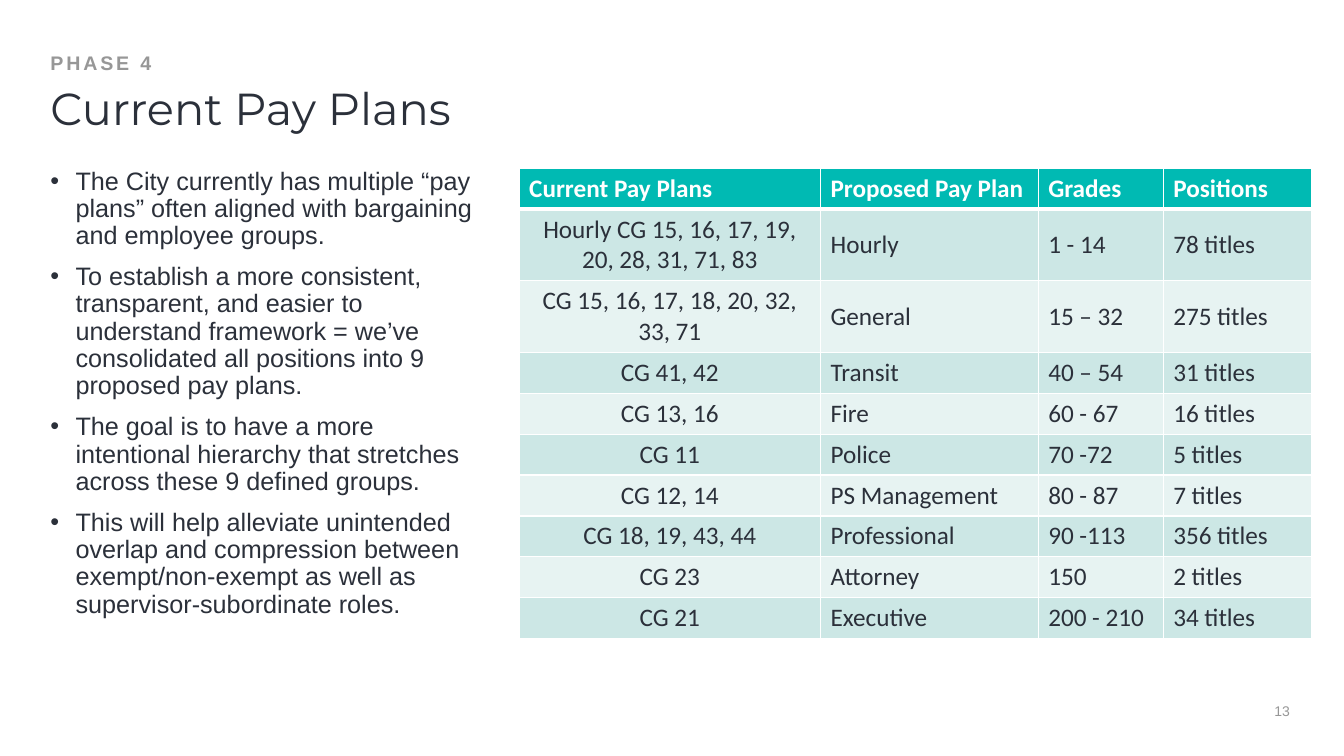
from lxml.etree import SubElement
from pptx import Presentation
from pptx.dml.color import RGBColor
from pptx.enum.text import MSO_ANCHOR, MSO_AUTO_SIZE, PP_ALIGN
from pptx.oxml.ns import qn
from pptx.util import Pt

HUES = {
    "ink": "2B303A",
    "gray": "979797",
    "white": "FFFFFF",
    "teal": "00BAB3",
    "dark": "CCE7E5",
    "light": "E7F3F2",
}
POINTS = [
    "The City currently has multiple “pay plans” often aligned with bargaining and employee groups.",
    "To establish a more consistent, transparent, and easier to understand framework = we’ve consolidated all positions into 9 proposed pay plans.",
    "The goal is to have a more intentional hierarchy that stretches across these 9 defined groups.",
    "This will help alleviate unintended overlap and compression between exempt/non-exempt as well as supervisor-subordinate roles.",
]
PLANS = [
    ("Current Pay Plans", "Proposed Pay Plan", "Grades", "Positions"),
    ("Hourly CG 15, 16, 17, 19, 20, 28, 31, 71, 83", "Hourly", "1 - 14", "78 titles"),
    ("CG 15, 16, 17, 18, 20, 32, 33, 71", "General", "15 – 32", "275 titles"),
    ("CG 41, 42", "Transit", "40 – 54", "31 titles"),
    ("CG 13, 16", "Fire", "60 - 67", "16 titles"),
    ("CG 11", "Police", "70 -72", "5 titles"),
    ("CG 12, 14", "PS Management", "80 - 87", "7 titles"),
    ("CG 18, 19, 43, 44", "Professional", "90 -113", "356 titles"),
    ("CG 23", "Attorney", "150", "2 titles"),
    ("CG 21", "Executive", "200 - 210", "34 titles"),
]
WIDTHS = [215.3, 155.5, 89.3, 105.8]
ROW = 29.2


def color(name):
    return RGBColor.from_string(HUES[name])


def style(par, face, size, hue, bold=False):
    for run in par.runs:
        run.font.name = face
        run.font.size = Pt(size)
        run.font.bold = bold
        run.font.color.rgb = color(hue)


def place(shape, box, anchor, top=0):
    shape.left, shape.top, shape.width, shape.height = map(Pt, box)
    frame = shape.text_frame
    frame.word_wrap = True
    frame.auto_size = MSO_AUTO_SIZE.NONE
    frame.vertical_anchor = anchor
    frame.margin_left = frame.margin_right = frame.margin_bottom = 0
    frame.margin_top = Pt(top)
    return frame


def add_label(slide, box, text, anchor):
    frame = place(slide.shapes.add_textbox(*map(Pt, box)), box, anchor)
    frame.text = text
    return frame.paragraphs[0]


def add_head(slide, box):
    left, top, width, height = box
    kicker = add_label(slide, (left, top, width, 15.1), "PHASE 4", MSO_ANCHOR.BOTTOM)
    kicker.line_spacing = 0.9
    style(kicker, "Arial", 14, "gray", True)
    kicker.runs[0].font._element.set("spc", "200")

    frame = place(slide.shapes.title, (left, top + 16.6, width, height - 16.6), MSO_ANCHOR.TOP, 7.2)
    frame.text = "Current Pay Plans"
    title = frame.paragraphs[0]
    title.alignment = PP_ALIGN.LEFT
    title.line_spacing = 0.9
    style(title, "Montserrat", 32, "ink")


def add_list(slide, box):
    frame = place(slide.placeholders[1], box, MSO_ANCHOR.TOP)
    frame.text = "\n".join(POINTS)
    for row, par in enumerate(frame.paragraphs):
        props = par._p.get_or_add_pPr()
        props.set("marL", str(Pt(18)))
        props.set("indent", str(Pt(-18)))
        SubElement(props, qn("a:buFont"), typeface="Arial")
        SubElement(props, qn("a:buChar"), char="•")
        par.line_spacing = 0.9
        par.space_before = Pt(10 if row else 0)
        style(par, "Arial", 18, "ink")


def add_edges(cell, head, below):
    props = cell._tc.get_or_add_tcPr()
    sizes = {"L": 1, "R": 1, "T": 3 if below else 1, "B": 3 if head else 1}
    for side, size in sizes.items():
        line = SubElement(props, qn(f"a:ln{side}"), w=str(Pt(size)))
        fill = SubElement(line, qn("a:solidFill"))
        SubElement(fill, qn("a:srgbClr"), val=HUES["white"])


def add_plans(slide, box):
    frame = slide.shapes.add_table(len(PLANS), len(WIDTHS), *map(Pt, box))
    table = frame.table
    for col, width in zip(table.columns, WIDTHS):
        col.width = Pt(width)
    for row, texts in enumerate(PLANS):
        head = row == 0
        table.rows[row].height = Pt(ROW)
        for col, text in enumerate(texts):
            cell = table.cell(row, col)
            add_edges(cell, head, row == 1)
            cell.fill.solid()
            cell.fill.fore_color.rgb = color("teal" if head else "dark" if row % 2 else "light")
            cell.text_frame.text = text
            cell.vertical_anchor = MSO_ANCHOR.TOP if head else MSO_ANCHOR.MIDDLE
            par = cell.text_frame.paragraphs[0]
            if col == 0 and not head:
                par.alignment = PP_ALIGN.CENTER
            style(par, "Calibri", 18, "white" if head else "ink", head)


def add_foot(slide, box):
    page = add_label(slide, box, "13", MSO_ANCHOR.MIDDLE)
    page.alignment = PP_ALIGN.CENTER
    style(page, "Arial", 10, "gray")


def main():
    deck = Presentation()
    deck.slide_width, deck.slide_height = Pt(960), Pt(540)
    slide = deck.slides.add_slide(deck.slide_layouts[1])
    add_head(slide, (36, 38.2, 888, 59))
    add_list(slide, (36, 120.2, 314, 386.6))
    add_plans(slide, (370.8, 120.2, sum(WIDTHS), ROW * len(PLANS)))
    add_foot(slide, (901.4, 501.8, 28.8, 12.2))
    deck.save("out.pptx")


if __name__ == "__main__":
    main()
